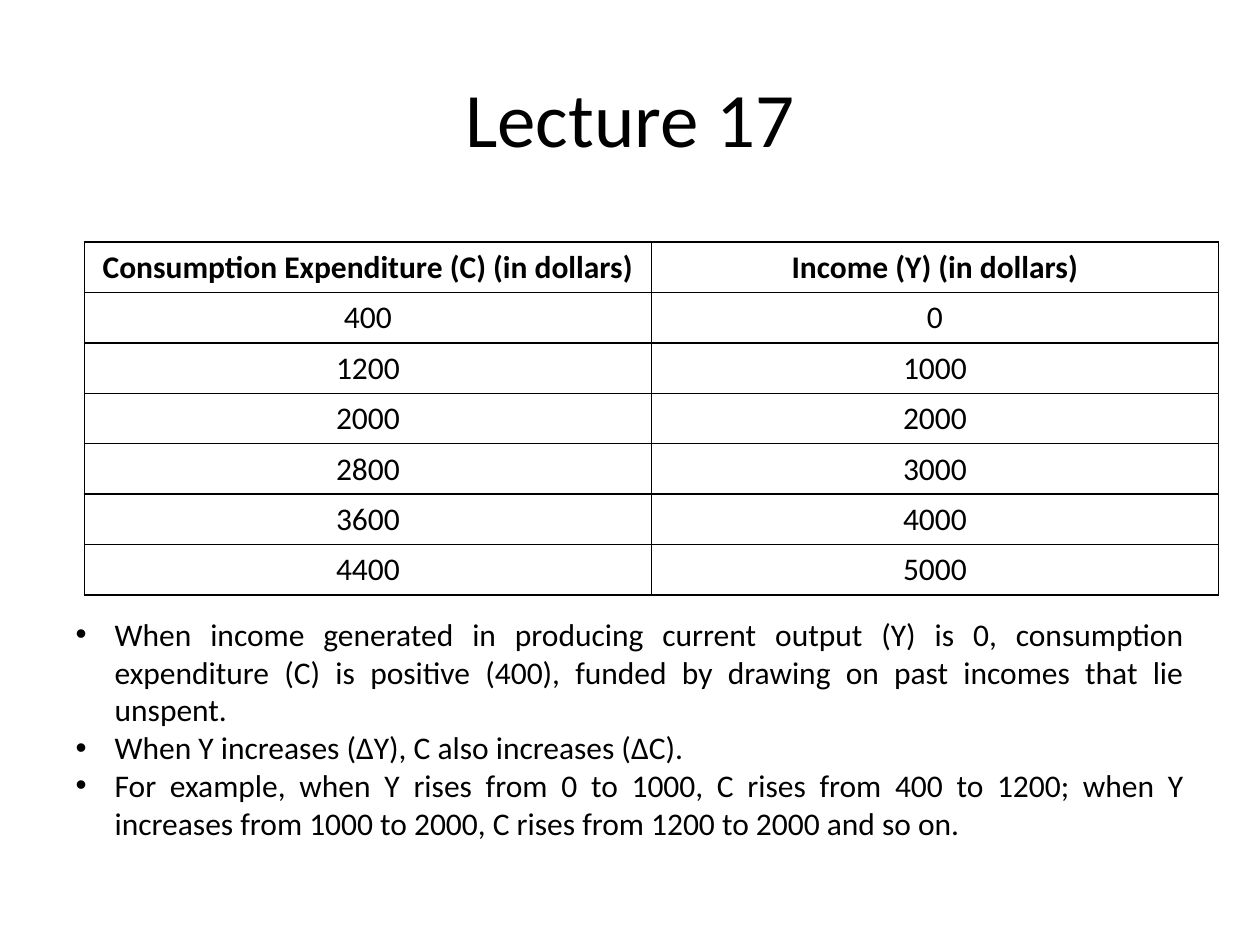
from lxml.etree import SubElement
from pptx import Presentation
from pptx.dml.color import RGBColor
from pptx.enum.text import MSO_ANCHOR, MSO_AUTO_SIZE, PP_ALIGN
from pptx.oxml.ns import qn
from pptx.util import Inches, Pt

COLORS = {"ink": "000000", "paper": "FFFFFF"}
FONT = "Calibri"

SCHEDULE = [
    ("Consumption Expenditure (C) (in dollars)", "Income (Y) (in dollars)"),
    ("400", "0"),
    ("1200", "1000"),
    ("2000", "2000"),
    ("2800", "3000"),
    ("3600", "4000"),
    ("4400", "5000"),
]
REMARKS = [
    "When income generated in producing current output (Y) is 0, consumption "
    "expenditure (C) is positive (400), funded by drawing on past incomes that lie unspent.",
    "When Y increases (∆Y), C also increases (∆C).",
    "For example, when Y rises from 0 to 1000, C rises from 400 to 1200; when Y "
    "increases from 1000 to 2000, C rises from 1200 to 2000 and so on.",
]


def style(paragraph, size, align, bold=False):
    paragraph.alignment = align
    font = paragraph.font
    font.name, font.size, font.bold = FONT, Pt(size), bold
    font.color.rgb = RGBColor.from_string(COLORS["ink"])


def place(shape, left, top, width, height):
    shape.left, shape.top = Inches(left), Inches(top)
    shape.width, shape.height = Inches(width), Inches(height)


def add_borders(cell):
    properties = cell._tc.get_or_add_tcPr()
    for position, side in enumerate(("a:lnL", "a:lnR", "a:lnT", "a:lnB")):
        line = SubElement(properties, qn(side), w=str(Pt(1)))
        fill = SubElement(line, qn("a:solidFill"))
        SubElement(fill, qn("a:srgbClr"), val=COLORS["ink"])
        properties.insert(position, line)  # borders come before the fill


def fill_title(slide, left, top, width, height):
    title = slide.shapes.title
    place(title, left, top, width, height)
    title.text_frame.text = "Lecture 17"
    title.text_frame.vertical_anchor = MSO_ANCHOR.MIDDLE
    style(title.text_frame.paragraphs[0], 44, PP_ALIGN.CENTER)


def add_schedule(slide, left, top, width, height):
    table = slide.shapes.add_table(
        len(SCHEDULE), len(SCHEDULE[0]),
        Inches(left), Inches(top), Inches(width), Inches(height)).table
    for row, values in enumerate(SCHEDULE):
        for column, value in enumerate(values):
            cell = table.cell(row, column)
            cell.text = value
            cell.fill.solid()
            cell.fill.fore_color.rgb = RGBColor.from_string(COLORS["paper"])
            add_borders(cell)
            style(cell.text_frame.paragraphs[0], 18, PP_ALIGN.CENTER, bold=row == 0)


def fill_remarks(slide, left, top, width, height):
    remarks = slide.placeholders[1]
    place(remarks, left, top, width, height)
    frame = remarks.text_frame
    frame.text = "\n".join(REMARKS)
    frame.word_wrap = True
    frame.auto_size = MSO_AUTO_SIZE.SHAPE_TO_FIT_TEXT
    for paragraph in frame.paragraphs:
        # Hanging bullet
        properties = paragraph._p.get_or_add_pPr()
        properties.set("marL", str(Inches(0.31)))
        properties.set("indent", str(Inches(-0.31)))
        SubElement(properties, qn("a:buFont"), typeface="Arial")
        SubElement(properties, qn("a:buChar"), char="•")
        paragraph.space_before = Pt(0)
        style(paragraph, 18, PP_ALIGN.JUSTIFY)


def main():
    presentation = Presentation()
    presentation.slide_width, presentation.slide_height = Inches(10), Inches(7.5)
    slide = presentation.slides.add_slide(presentation.slide_layouts[1])
    fill_title(slide, 0.5, 0.3, 9, 1.25)
    add_schedule(slide, 0.67, 1.92, 9, 2.8)
    fill_remarks(slide, 0.5, 4.83, 9, 1.92)
    presentation.save("out.pptx")


if __name__ == "__main__":
    main()
